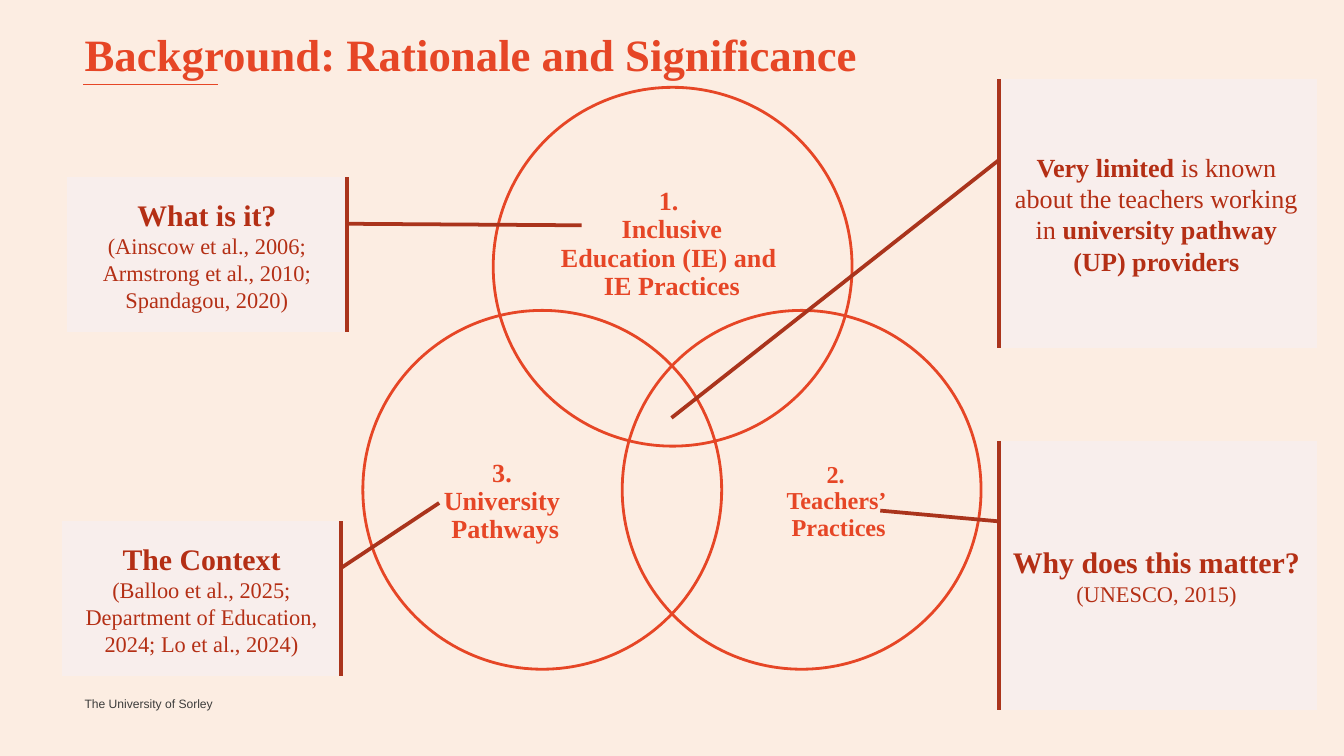
from copy import deepcopy
from dataclasses import dataclass

from lxml import etree
from pptx import Presentation
from pptx import util as u
from pptx.dml.color import RGBColor
from pptx.enum import shapes, text
from pptx.oxml.ns import qn


@dataclass(frozen=True)
class Theme:
    paper: str = "FCEDE2"
    accent: str = "E64626"
    panel: str = "F8EEEC"
    bar: str = "AA341C"
    ink: str = "B42F15"
    muted: str = "3C3C3B"
    serif: str = "Times New Roman"
    sans: str = "Arial"
    title: float = 24
    heading: float = 16
    label: float = 14
    small_label: float = 13
    body: float = 12
    footer: float = 6.5


class SlideBuilder:
    def __init__(self, slide, theme):
        self.slide = slide
        self.theme = theme
        background = slide.background.fill
        background.solid()
        background.fore_color.rgb = RGBColor.from_string(theme.paper)

    def style(self, para, size, color, bold=False, font=None):
        for span in para.runs:
            span.font.name = font or self.theme.serif
            span.font.size = u.Pt(size)
            span.font.bold = bold
            span.font.color.rgb = RGBColor.from_string(color)
        for line_break in para._p.findall(qn("a:br")):
            line_break.insert(0, deepcopy(para.runs[0].font._element))

    def outline(self, item, color, width):
        item.line.color.rgb = RGBColor.from_string(color)
        item.line.width = u.Pt(width)

    def textbox(self, place, words, size, color, bold=True, font=None,
                centred=False, anchor=text.MSO_ANCHOR.MIDDLE):
        box = self.slide.shapes.add_textbox(*map(u.Inches, place))
        frame = box.text_frame
        frame.word_wrap = True
        frame.vertical_anchor = anchor
        frame.margin_left = frame.margin_right = 0
        frame.margin_top = frame.margin_bottom = 0
        para = frame.paragraphs[0]
        para.text = words
        if centred:
            para.alignment = text.PP_ALIGN.CENTER
            para.line_spacing = 0.9
        self.style(para, size, color, bold, font)

    def rule(self, left, top, width):
        line = self.slide.shapes.add_connector(
            shapes.MSO_CONNECTOR.STRAIGHT,
            *map(u.Inches, (left, top, left + width, top)))
        self.outline(line, self.theme.accent, 0.75)
        etree.SubElement(line._element.spPr, qn("a:effectLst"))

    def circle(self, left, top, size):
        ring = self.slide.shapes.add_shape(
            shapes.MSO_SHAPE.OVAL, *map(u.Inches, (left, top, size, size)))
        ring.shadow.inherit = False
        ring.fill.background()
        self.outline(ring, self.theme.accent, 1.5)

    def callout(self, place, pointer, paragraphs):
        box = self.slide.shapes.add_shape(
            shapes.MSO_SHAPE.LINE_CALLOUT_1_ACCENT_BAR, *map(u.Inches, place))
        box.shadow.inherit = False
        for index, value in enumerate(pointer):
            box.adjustments[index] = value
        box.fill.solid()
        box.fill.fore_color.rgb = RGBColor.from_string(self.theme.panel)
        self.outline(box, self.theme.bar, 2)
        frame = box.text_frame
        frame.word_wrap = True
        frame.vertical_anchor = text.MSO_ANCHOR.MIDDLE
        frame.text = "\n".join(parts[0] for parts, _, _ in paragraphs)
        for para, (parts, size, bold) in zip(frame.paragraphs, paragraphs):
            para.alignment = text.PP_ALIGN.CENTER
            for part in parts[1:]:
                para.add_run().text = part
            self.style(para, size, self.theme.ink, bold)
            for span in para.runs[1::2]:
                span.font.bold = not bold

    def cited_callout(self, place, pointer, heading, citation):
        self.callout(place, pointer, [([heading], self.theme.heading, True),
                                      ([citation], self.theme.body, False)])


def main():
    theme = Theme()
    deck = Presentation()
    deck.slide_width = u.Inches(10)
    deck.slide_height = deck.slide_width * 9 // 16
    page = SlideBuilder(deck.slides.add_slide(deck.slide_layouts[6]), theme)

    page.textbox((0.63, 5.18, 1.03, 0.13), "The University of Sorley",
                 theme.footer, theme.muted, False, theme.sans,
                 anchor=text.MSO_ANCHOR.TOP)
    page.rule(0.62, 0.63, 1)
    page.textbox((0.63, 0.2, 8.74, 0.4), "Background: Rationale and Significance",
                 theme.title, theme.accent)

    venn = [
        ((3.67, 0.65), (4.02, 1.22, 1.96, 1.2), theme.label,
         "1. \vInclusive\vEducation (IE) and \vIE Practices"),
        ((4.63, 2.31), (5.44, 3, 1.6, 1.47), theme.small_label,
         "2. \vTeachers’ \vPractices"),
        ((2.7, 2.31), (2.96, 3, 1.6, 1.47), theme.label,
         "3. \vUniversity \vPathways"),
    ]
    for corner, label_place, size, words in venn:
        page.circle(*corner, 2.67)
        page.textbox(label_place, words, size, theme.accent, centred=True)

    small, large = (2.08, 1.15), (2.39, 2)
    page.cited_callout((0.5, 1.32, *small), (0.3, 1, 0.31, 1.84), "What is it?",
                       "(Ainscow et al., 2006; Armstrong et al., 2010; Spandagou, 2020)")
    page.cited_callout((7.41, 3.28, *large), (0.3, 0.01, 0.26, -0.36),
                       "Why does this matter?", "(UNESCO, 2015)")
    page.cited_callout((0.46, 3.88, *small), (0.3, 1, -0.12, 1.35), "The Context",
                       "(Balloo et al., 2025; Department of Education, 2024; "
                       "Lo et al., 2024)")
    page.callout((7.41, 0.59, *large), (0.3, 0.01, 1.26, -1.01),
                 [(["Very limited ", "is known about the teachers working in ",
                    "university pathway (UP) providers"], theme.label, True)])

    deck.save("out.pptx")


if __name__ == "__main__":
    main()
